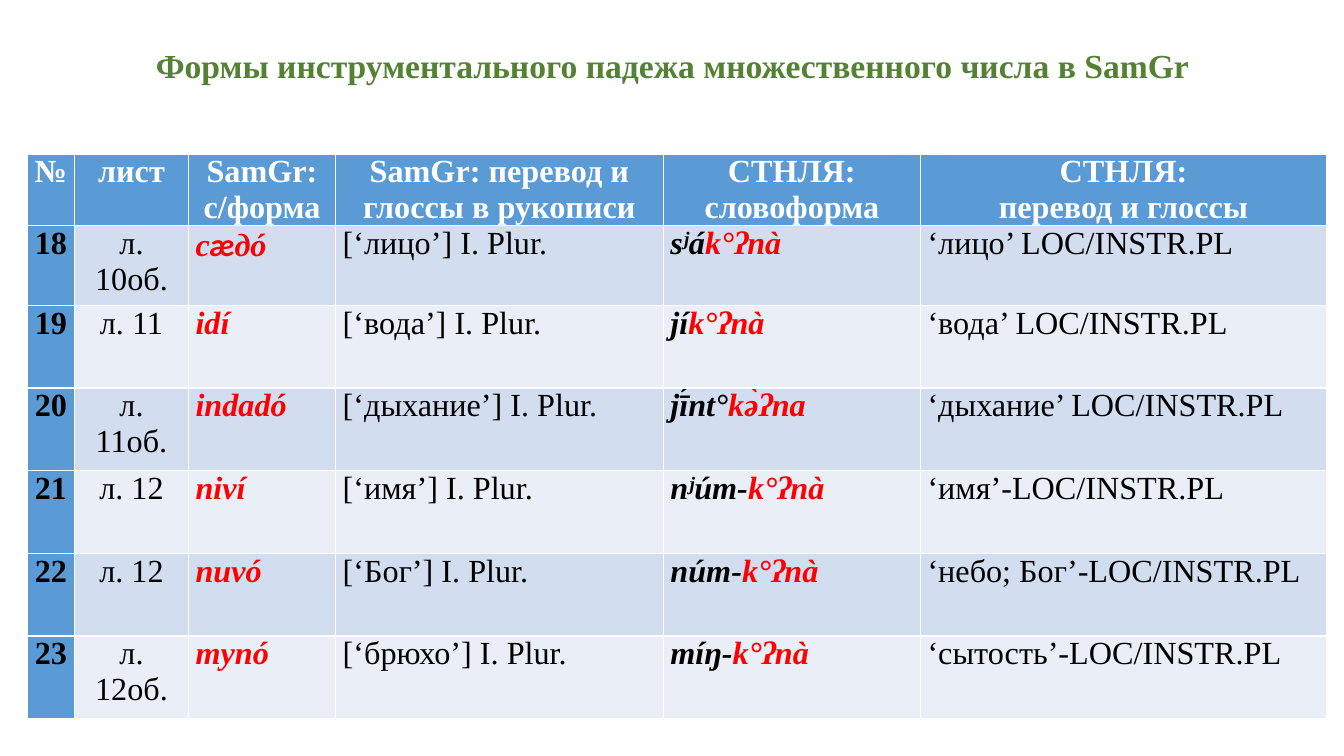
from pptx import Presentation
from pptx.dml.color import RGBColor
from pptx.enum.text import MSO_ANCHOR, PP_ALIGN
from pptx.util import Inches, Pt

WHITE = RGBColor(0xFF, 0xFF, 0xFF)
BLACK = RGBColor(0x00, 0x00, 0x00)
RED = RGBColor(0xFF, 0x00, 0x00)
GREEN = RGBColor(0x54, 0x82, 0x35)
BLUE = RGBColor(0x5B, 0x9B, 0xD5)
BANDS = (RGBColor(0xD2, 0xDE, 0xEF), RGBColor(0xEA, 0xEF, 0xF7))

SERIF = "Times New Roman"
SANS = "Calibri"

COLUMN_WIDTHS = (0.47, 1.13, 1.46, 3.25, 2.55, 4.03)
ROW_HEIGHTS = (0.7, 0.79, 0.82, 0.82, 0.82, 0.82, 0.82)
FIRST_NUMBER = 18
HEADINGS = (
    "№",
    "лист",
    "SamGr:\nc/форма",
    "SamGr: перевод и глоссы в рукописи",
    "СТНЛЯ:\ncловоформа",
    "СТНЛЯ:\nперевод и глоссы",
)
WORD_FORMS = (
    ("л. 10об.", "сæдó", "[‘лицо’] I. Plur.", "sʲá", "k°ʔnà", "‘лицо’ LOC/INSTR.PL"),
    ("л. 11", "idí", "[‘вода’] I. Plur.", "jí", "k°ʔnà", "‘вода’ LOC/INSTR.PL"),
    ("л. 11об.", "indadó", "[‘дыхание’] I. Plur.", "jī́nt°", "kə̀ʔna", "‘дыхание’ LOC/INSTR.PL"),
    ("л. 12", "niví", "[‘имя’] I. Plur.", "nʲúm-", "k°ʔnà", "‘имя’-LOC/INSTR.PL"),
    ("л. 12", "nuvó", "[‘Бог’] I. Plur.", "núm-", "k°ʔnà", "‘небо; Бог’-LOC/INSTR.PL"),
    ("л. 12об.", "mynó", "[‘брюхо’] I. Plur.", "míŋ-", "k°ʔnà", "‘сытость’-LOC/INSTR.PL"),
)


def add_text(paragraph, text, size=23, font=SERIF, color=BLACK, bold=False,
             italic=False, align=PP_ALIGN.LEFT):
    paragraph.alignment = align
    run = paragraph.add_run()
    run.text = text
    run.font.size = Pt(size)
    run.font.name = font
    run.font.color.rgb = color
    run.font.bold = bold
    run.font.italic = italic


def prepare_cell(cell, fill):
    cell.fill.solid()
    cell.fill.fore_color.rgb = fill
    cell.margin_left = cell.margin_right = Inches(0.07)
    cell.margin_top = cell.margin_bottom = 0
    return cell.text_frame


def place_title(slide, left, top, width, height):
    title = slide.shapes.title
    title.left, title.top = Inches(left), Inches(top)
    title.width, title.height = Inches(width), Inches(height)
    title.text_frame.word_wrap = True
    title.text_frame.vertical_anchor = MSO_ANCHOR.MIDDLE
    heading = title.text_frame.paragraphs[0]
    heading.line_spacing = 0.9
    add_text(heading, "Формы инструментального падежа множественного числа в SamGr",
             size=24, color=GREEN, bold=True, align=PP_ALIGN.CENTER)


def fill_header(table):
    for column, heading in enumerate(HEADINGS):
        frame = prepare_cell(table.cell(0, column), BLUE)
        for index, line in enumerate(heading.split("\n")):
            paragraph = frame.add_paragraph() if index else frame.paragraphs[0]
            add_text(paragraph, line, color=WHITE, bold=True, align=PP_ALIGN.CENTER)


def fill_word_row(table, row, word_form):
    sheet, manuscript_form, manuscript_gloss, stem, ending, gloss = word_form
    band = BANDS[(row - 1) % 2]
    fills = [BLUE] + [band] * (len(COLUMN_WIDTHS) - 1)
    number_cell, sheet_cell, form_cell, translation_cell, word_cell, gloss_cell = [
        prepare_cell(table.cell(row, column), fill).paragraphs[0]
        for column, fill in enumerate(fills)
    ]
    add_text(number_cell, str(FIRST_NUMBER + row - 1), bold=True, align=PP_ALIGN.CENTER)
    add_text(sheet_cell, sheet, align=PP_ALIGN.CENTER)
    before, ligature, after = manuscript_form.partition("æ")
    for part, font in ((before, SERIF), (ligature, SANS), (after, SERIF)):
        if part:
            add_text(form_cell, part, font=font, color=RED, bold=True, italic=True)
    add_text(translation_cell, manuscript_gloss)
    add_text(word_cell, stem, bold=True, italic=True)
    add_text(word_cell, ending, color=RED, bold=True, italic=True)
    add_text(gloss_cell, gloss)


def place_word_table(slide, left, top):
    table = slide.shapes.add_table(
        len(ROW_HEIGHTS), len(COLUMN_WIDTHS), Inches(left), Inches(top),
        Inches(sum(COLUMN_WIDTHS)), Inches(sum(ROW_HEIGHTS))).table
    for column, width in zip(table.columns, COLUMN_WIDTHS):
        column.width = Inches(width)
    for row, height in zip(table.rows, ROW_HEIGHTS):
        row.height = Inches(height)
    fill_header(table)
    for row, word_form in enumerate(WORD_FORMS, start=1):
        fill_word_row(table, row, word_form)


def main():
    presentation = Presentation()
    presentation.slide_width = Inches(13.33)
    presentation.slide_height = Inches(7.5)
    slide = presentation.slides.add_slide(presentation.slide_layouts[5])
    place_word_table(slide, 0.27, 1.53)
    place_title(slide, 0.92, 0.22, 11.5, 0.91)
    presentation.save("out.pptx")


if __name__ == "__main__":
    main()
